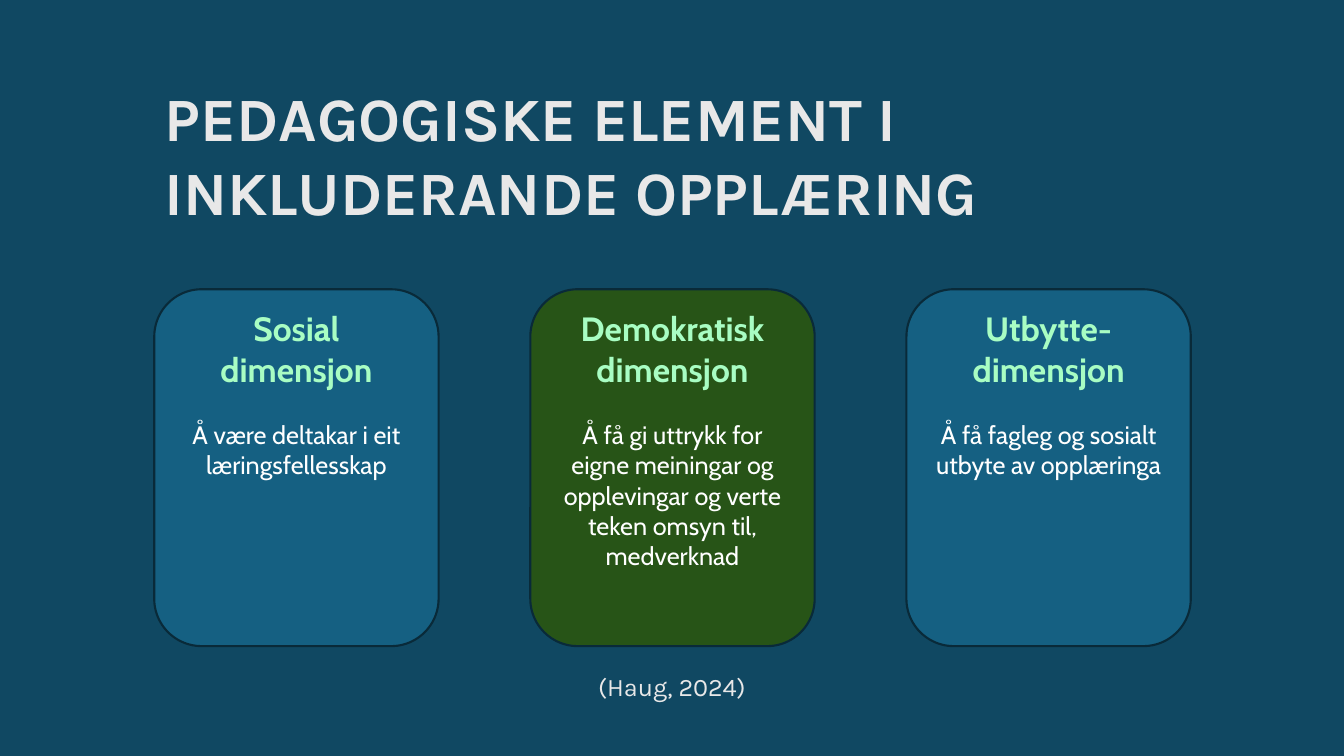
from pptx import Presentation
from pptx.dml.color import RGBColor
from pptx.enum.shapes import MSO_SHAPE as Shape
from pptx.enum.text import MSO_ANCHOR as Anchor, MSO_AUTO_SIZE as AutoSize, PP_ALIGN as Align
from pptx.util import Inches, Pt

# Colours
NAVY = RGBColor(0x10, 0x48, 0x62)
BLUE = RGBColor(0x15, 0x60, 0x82)
GREEN = RGBColor(0x27, 0x54, 0x17)
OUTLINE = RGBColor(0x09, 0x2A, 0x39)
MINT = RGBColor(0xA8, 0xFD, 0xC3)
PALE = RGBColor(0xE8, 0xE8, 0xE8)
WHITE = RGBColor(0xFF, 0xFF, 0xFF)

# Grid: three equal columns
LEFT = Inches(1.53)
COLUMN_STEP = Inches(3.73)
CARD_TOP = Inches(2.87)
CARD_WIDTH, CARD_HEIGHT = Inches(2.82), Inches(3.54)

DIMENSIONS = [
    ("Sosial dimensjon", "Å være deltakar i eit læringsfellesskap", BLUE),
    ("Demokratisk dimensjon",
     "Å få gi uttrykk for eigne meiningar og opplevingar og verte teken omsyn til, medverknad",
     GREEN),
    ("Utbytte-dimensjon", "Å få fagleg og sosialt utbyte av opplæringa", BLUE),
]


def write(paragraph, text, *, font, size, color, bold=False, align=Align.CENTER, before=0):
    paragraph.alignment = align
    paragraph.line_spacing = 1.0
    if before:
        paragraph.space_before = Pt(before)
    run = paragraph.add_run()
    run.text = text
    run.font.name = font
    run.font.size = Pt(size)
    run.font.bold = bold
    run.font.color.rgb = color


def prepare_frame(frame):
    frame.word_wrap = True
    frame.auto_size = AutoSize.NONE
    frame.vertical_anchor = Anchor.TOP
    return frame


def add_heading(slide, text):
    heading = slide.shapes.title
    heading.left, heading.top = LEFT, Inches(0.74)
    heading.width, heading.height = Inches(9.01), Inches(1.58)
    frame = prepare_frame(heading.text_frame)
    write(frame.paragraphs[0], text, font="Karla", size=44, color=PALE,
          bold=True, align=Align.LEFT)


def add_card(slide, column, dimension, meaning, fill):
    card = slide.shapes.add_shape(Shape.ROUNDED_RECTANGLE, LEFT + column * COLUMN_STEP,
                                  CARD_TOP, CARD_WIDTH, CARD_HEIGHT)
    card.shadow.inherit = False
    card.fill.solid()
    card.fill.fore_color.rgb = fill
    card.line.color.rgb = OUTLINE
    card.line.width = Pt(1.5)
    frame = prepare_frame(card.text_frame)
    write(frame.paragraphs[0], dimension, font="Cabin", size=24, color=MINT, bold=True)
    write(frame.add_paragraph(), meaning, font="Cabin", size=18, color=WHITE, before=22)


def add_citation(slide, text):
    citation = slide.shapes.add_textbox(Inches(5.67), Inches(6.61), Inches(1.99), Inches(0.4))
    frame = prepare_frame(citation.text_frame)
    write(frame.paragraphs[0], text, font="Karla", size=18, color=PALE)


def main():
    deck = Presentation()
    deck.slide_width, deck.slide_height = Inches(13.33), Inches(7.5)
    slide = deck.slides.add_slide(deck.slide_layouts.get_by_name("Title Only"))
    slide.background.fill.solid()
    slide.background.fill.fore_color.rgb = NAVY

    # Heading, dimension cards and citation
    add_heading(slide, "PEDAGOGISKE ELEMENT I INKLUDERANDE OPPLÆRING")
    for column, (dimension, meaning, fill) in enumerate(DIMENSIONS):
        add_card(slide, column, dimension, meaning, fill)
    add_citation(slide, "(Haug, 2024)")

    deck.save("out.pptx")


if __name__ == "__main__":
    main()
